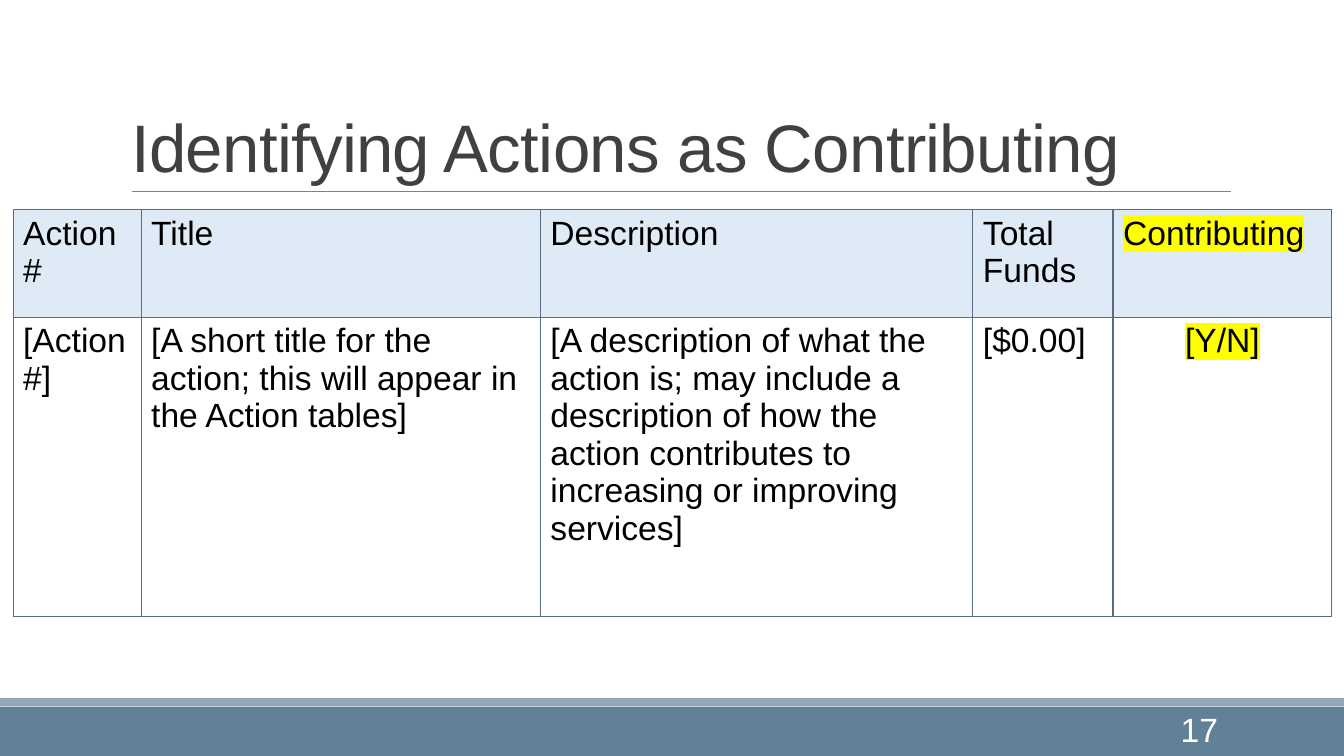
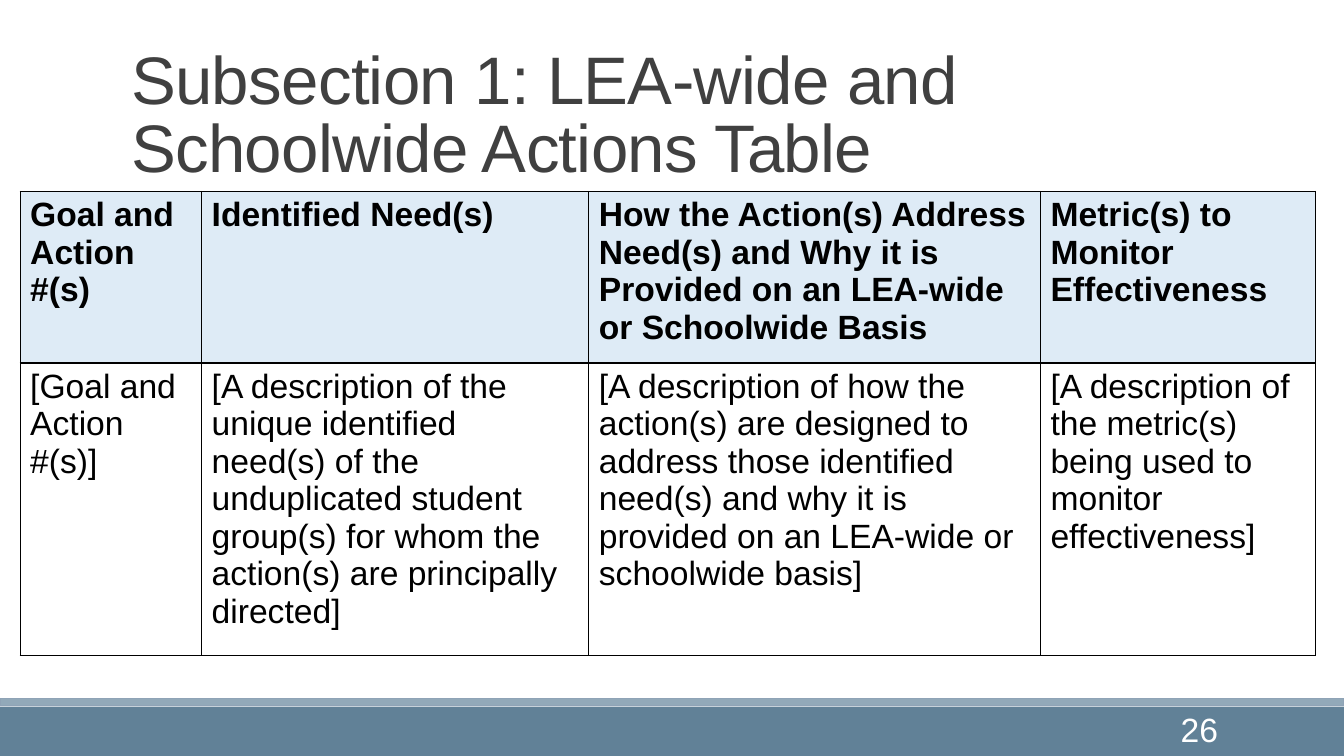
from lxml import etree
from pptx import Presentation
from pptx.dml.color import RGBColor
from pptx.enum.shapes import MSO_CONNECTOR, MSO_SHAPE
from pptx.enum.text import MSO_ANCHOR, MSO_AUTO_SIZE, PP_ALIGN
from pptx.oxml.ns import qn
from pptx.util import Inches, Pt

RECTANGLE = MSO_SHAPE.RECTANGLE
STRAIGHT = MSO_CONNECTOR.STRAIGHT
BOTTOM, MIDDLE = MSO_ANCHOR.BOTTOM, MSO_ANCHOR.MIDDLE
LEFT, CENTER, RIGHT = PP_ALIGN.LEFT, PP_ALIGN.CENTER, PP_ALIGN.RIGHT
NO_AUTOFIT = MSO_AUTO_SIZE.NONE

FONT = "Arial"
WHITE = RGBColor(0xFF, 0xFF, 0xFF)
BLACK = RGBColor(0x00, 0x00, 0x00)
TITLE_GRAY = RGBColor(0x40, 0x40, 0x40)
RULE_GRAY = RGBColor(0x80, 0x80, 0x80)
BAND = RGBColor(0x61, 0x81, 0x97)
STRIPE = RGBColor(0x92, 0xA9, 0xB9)
STRIPE_LINE = RGBColor(0x8F, 0xA3, 0xB6)
HEADER_BLUE = RGBColor(0xDE, 0xEB, 0xF6)
SLATE = RGBColor(0x56, 0x6C, 0x83)
YELLOW = RGBColor(0xFF, 0xFF, 0x00)

SLIDE_WIDTH, SLIDE_HEIGHT = 13.33, 7.5
TITLE_BOX = (1.2, 0.31, 11, 1.59)
STRIPE_BOX = (0, 6.93, SLIDE_WIDTH, 0.07)
BAND_BOX = (0, 7.01, SLIDE_WIDTH, 0.49)
NUMBER_BOX = (10.75, 7.03, 1.43, 0.4)
RULE_LEFT, RULE_RIGHT, RULE_TOP = 1.31, 12.21, 1.9


def inches(box):
    return [Inches(length) for length in box]


def set_font(para, size, color, bold=False):
    para.font.name = FONT
    para.font.size = Pt(size)
    para.font.bold = bold
    para.font.color.rgb = color


def add_color(parent, tag, color):
    element = etree.SubElement(parent, qn(tag))
    etree.SubElement(element, qn("a:srgbClr"), val=str(color))


def add_band(page, box, fill, line=None):
    band = page.shapes.add_shape(RECTANGLE, *inches(box))
    band.shadow.inherit = False
    band.fill.solid()
    band.fill.fore_color.rgb = fill
    if line is None:
        band.line.fill.background()
    else:
        band.line.color.rgb = line
        band.line.width = Pt(1.25)


def add_rule(page):
    rule = page.shapes.add_connector(
        STRAIGHT, *inches((RULE_LEFT, RULE_TOP, RULE_RIGHT, RULE_TOP)))
    rule.line.color.rgb = RULE_GRAY
    rule.line.width = Pt(0.5)
    etree.SubElement(rule.element.spPr, qn("a:effectLst"))


def place_title(page, text, box):
    title = page.shapes.title
    title.left, title.top, title.width, title.height = inches(box)
    frame = title.text_frame
    frame.text = text
    frame.word_wrap = True
    frame.auto_size = NO_AUTOFIT
    frame.vertical_anchor = BOTTOM
    para = frame.paragraphs[0]
    para.alignment = LEFT
    para.line_spacing = 0.85
    set_font(para, 48, TITLE_GRAY)
    para.runs[0].font._element.set("spc", "-50")


def add_number(page, number, box):
    frame = page.shapes.add_textbox(*inches(box)).text_frame
    frame.word_wrap = True
    frame.vertical_anchor = MIDDLE
    para = frame.paragraphs[0]
    para.text = str(number)
    para.alignment = RIGHT
    set_font(para, 24, WHITE)


def add_page(deck, title, number):
    """Add a slide with the shared bands, rule, title and page number."""
    page = deck.slides.add_slide(deck.slide_layouts[5])
    add_band(page, BAND_BOX, BAND)
    add_band(page, STRIPE_BOX, STRIPE, STRIPE_LINE)
    add_rule(page)
    place_title(page, title, TITLE_BOX)
    add_number(page, number, NUMBER_BOX)
    return page


def set_borders(cell, color):
    properties = cell._tc.get_or_add_tcPr()
    for side in ("a:lnL", "a:lnR", "a:lnT", "a:lnB"):
        line = etree.SubElement(properties, qn(side), w=str(Pt(1)))
        add_color(line, "a:solidFill", color)


def fill_cell(cell, text, is_header, border, bold):
    set_borders(cell, border)
    if is_header:
        cell.fill.solid()
        cell.fill.fore_color.rgb = HEADER_BLUE
    else:
        cell.fill.background()
    cell.text = text
    set_font(cell.text_frame.paragraphs[0], 24, BLACK, bold)


def add_grid(page, origin, widths, heights, rows, border, bold_header=False):
    """Add a table whose first row is a tinted header."""
    box = (*origin, sum(widths), sum(heights))
    frame = page.shapes.add_table(len(rows), len(widths), *inches(box))
    table = frame.table
    table.horz_banding = False
    for column, width in zip(table.columns, widths):
        column.width = Inches(width)
    for row, height in zip(table.rows, heights):
        row.height = Inches(height)
    for row_index, texts in enumerate(rows):
        is_header = row_index == 0
        for column_index, text in enumerate(texts):
            fill_cell(table.cell(row_index, column_index), text, is_header,
                      border, is_header and bold_header)
    return table


def highlight(cell):
    span = cell.text_frame.paragraphs[0].runs[0]
    add_color(span.font._element, "a:highlight", YELLOW)


def add_contributing_slide(deck):
    page = add_page(deck, "Identifying Actions as Contributing", 17)
    rows = [
        ["Action #", "Title", "Description", "Total Funds", "Contributing"],
        ["[Action #]",
         "[A short title for the action; this will appear in the Action tables]",
         "[A description of what the action is; may include a description of "
         "how the action contributes to increasing or improving services]",
         "[$0.00]", "[Y/N]"],
    ]
    table = add_grid(page, (0.13, 2.08), (1.27, 3.96, 4.29, 1.39, 2.17),
                     (1.07, 2.97), rows, SLATE)
    for row_index in range(len(rows)):
        highlight(table.cell(row_index, 4))
    table.cell(1, 4).text_frame.paragraphs[0].alignment = CENTER


def add_subsection_slide(deck):
    page = add_page(
        deck, "Subsection 1: LEA-wide and Schoolwide Actions Table", 26)
    rows = [
        ["Goal and Action #(s)", "Identified Need(s)",
         "How the Action(s) Address Need(s) and Why it is Provided on an "
         "LEA-wide or Schoolwide Basis",
         "Metric(s) to Monitor Effectiveness"],
        ["[Goal and Action #(s)]",
         "[A description of the unique identified need(s) of the unduplicated "
         "student group(s) for whom the action(s) are principally directed]",
         "[A description of how the action(s) are designed to address those "
         "identified need(s) and why it is provided on an LEA-wide or "
         "schoolwide basis]",
         "[A description of the metric(s) being used to monitor effectiveness]"],
    ]
    add_grid(page, (0.2, 1.9), (1.8, 3.84, 4.48, 2.73), (1.59, 2.89), rows,
             BLACK, bold_header=True)


def main():
    deck = Presentation()
    deck.slide_width = Inches(SLIDE_WIDTH)
    deck.slide_height = Inches(SLIDE_HEIGHT)
    add_contributing_slide(deck)
    add_subsection_slide(deck)
    deck.save("out.pptx")


if __name__ == "__main__":
    main()
